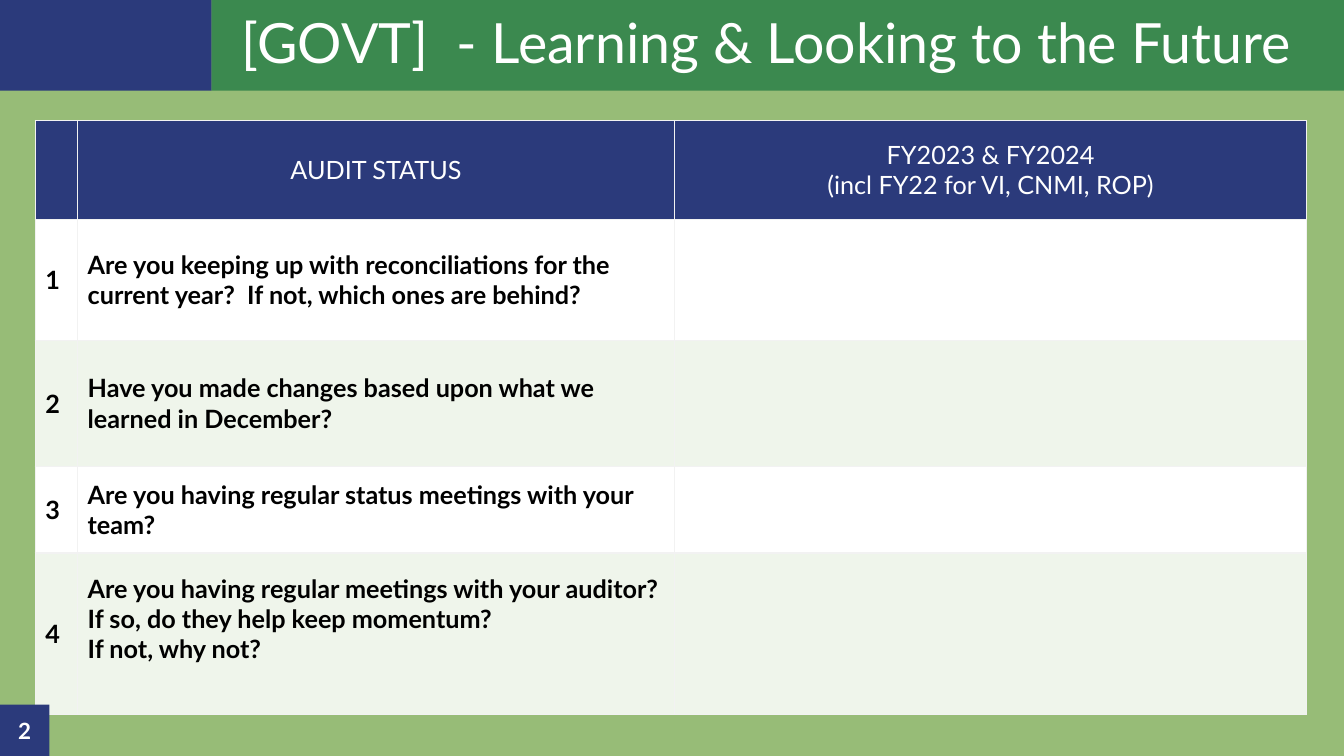
import lxml.etree
import pptx
import pptx.dml.color
import pptx.enum.shapes
import pptx.enum.text
import pptx.oxml.ns
import pptx.util

COLORS = {
    "navy": "2B3A7B",
    "green": "3B894F",
    "sage": "97BC77",
    "mint": "EFF5EB",
    "white": "FFFFFF",
    "black": "000000",
    "border": "F2F2F2",
}
ALIGN = pptx.enum.text.PP_ALIGN
MIDDLE = pptx.enum.text.MSO_ANCHOR.MIDDLE


class SlideBuilder:
    """Holds the style and the current slide; lengths are percent of the slide's size."""

    font = "Lato"

    def __init__(self, deck, background):
        self.width, self.height = deck.slide_width, deck.slide_height
        self.slide = deck.slides.add_slide(deck.slide_layouts[6])
        self.fill(self.slide.background.fill, background)

    def across(self, share):
        return round(self.width * share / 100)

    def down(self, share):
        return round(self.height * share / 100)

    def color(self, name):
        return pptx.dml.color.RGBColor.from_string(COLORS[name])

    def fill(self, target, name):
        target.solid()
        target.fore_color.rgb = self.color(name)

    def add_text(self, frame, lines, size, color, bold=False, align=ALIGN.LEFT, spacing=None):
        frame.word_wrap = True
        for index, line in enumerate(lines):
            paragraph = frame.paragraphs[0] if index == 0 else frame.add_paragraph()
            paragraph.alignment = align
            paragraph.line_spacing = spacing
            run = paragraph.add_run()
            run.text = line
            run.font.name = self.font
            run.font.size = pptx.util.Pt(size)
            run.font.bold = bold
            run.font.color.rgb = self.color(color)

    def block(self, left, top, width, height, color):
        shape = self.slide.shapes.add_shape(
            pptx.enum.shapes.MSO_SHAPE.RECTANGLE,
            self.across(left), self.down(top), self.across(width), self.down(height))
        shape.shadow.inherit = False
        shape.line.fill.background()
        self.fill(shape.fill, color)
        shape.text_frame.vertical_anchor = MIDDLE
        return shape.text_frame

    def border(self, cell):
        properties = cell._tc.get_or_add_tcPr()
        qn = pptx.oxml.ns.qn
        for position, side in enumerate(("a:lnL", "a:lnR", "a:lnT", "a:lnB")):
            edge = lxml.etree.Element(qn(side), w=str(pptx.util.Pt(1)))
            solid = lxml.etree.SubElement(edge, qn("a:solidFill"))
            lxml.etree.SubElement(solid, qn("a:srgbClr"), val=COLORS["border"])
            properties.insert(position, edge)

    def table(self, left, top, widths, heights):
        table = self.slide.shapes.add_table(
            len(heights), len(widths), self.across(left), self.down(top),
            self.across(sum(widths)), self.down(sum(heights))).table
        for column, width in zip(table.columns, widths):
            column.width = self.across(width)
        for row, height in zip(table.rows, heights):
            row.height = self.down(height)
        return table

    def cell(self, cell, lines, fill, **style):
        self.fill(cell.fill, fill)
        self.border(cell)
        cell.vertical_anchor = MIDDLE
        self.add_text(cell.text_frame, lines, 18, **style)


def main():
    deck = pptx.Presentation()
    deck.slide_width = pptx.util.Inches(13.33)
    deck.slide_height = pptx.util.Inches(7.5)
    page = SlideBuilder(deck, "sage")

    # Title band
    page.block(0, 0, 15.75, 12, "navy")
    title = page.block(15.75, 0, 84.25, 12, "green")
    title.margin_left = pptx.util.Inches(0.3)
    page.add_text(title, ["[GOVT]  - Learning & Looking to the Future"], 39.6, "white", spacing=0.9)

    # Audit questions
    headings = [
        [],
        ["AUDIT STATUS"],
        ["FY2023 & FY2024", "(incl FY22 for VI, CNMI, ROP)"],
    ]
    questions = [
        ["Are you keeping up with reconciliations for the current year?  "
         "If not, which ones are behind?"],
        ["Have you made changes based upon what we learned in December?"],
        ["Are you having regular status meetings with your team?"],
        ["Are you having regular meetings with your auditor?",
         "If so, do they help keep momentum?",
         "If not, why not?"],
    ]
    audit = page.table(2.63, 15.95, [3.15, 44.41, 47.04], [13.07, 16, 16.67, 11.47, 21.33])
    for column, heading in enumerate(headings):
        page.cell(audit.cell(0, column), heading, "navy", color="white", align=ALIGN.CENTER)
    for number, question in enumerate(questions, start=1):
        band = "white" if number % 2 else "mint"
        for column, lines in enumerate(([str(number)], question, [])):
            page.cell(audit.cell(number, column), lines, band, color="black", bold=True)
    # The last question sits a little above the middle of its row
    audit.cell(len(questions), 1).margin_bottom = pptx.util.Inches(0.35)

    # Page number
    page_number = page.block(0, 93.2, 3.68, 6.8, "navy")
    page.add_text(page_number, ["2"], 16, "white", bold=True, align=ALIGN.CENTER)

    deck.save("out.pptx")


if __name__ == "__main__":
    main()
